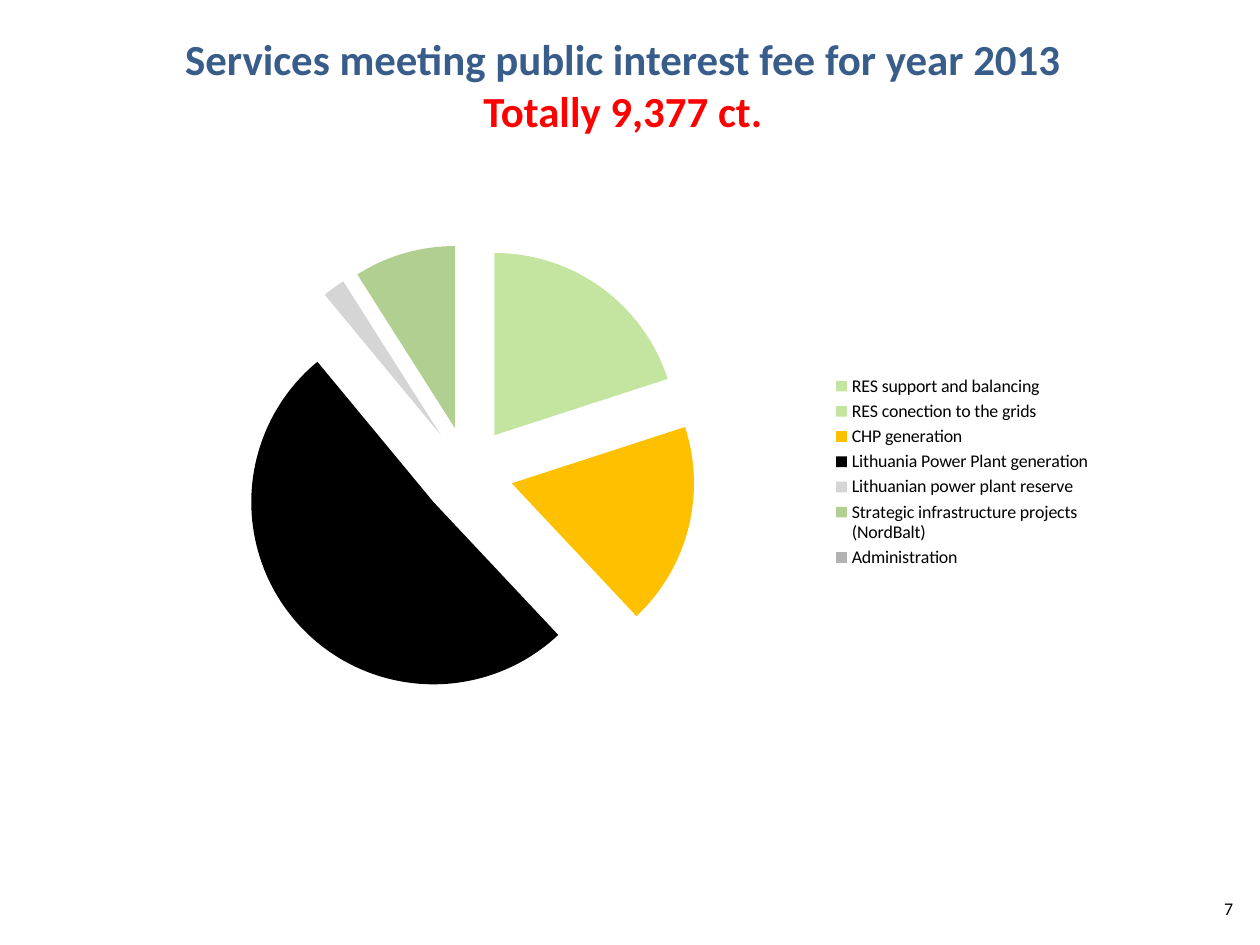
import pptx
import pptx.util
import pptx.dml.color
import pptx.chart.data
import pptx.enum.chart
import pptx.enum.text
import pptx.oxml

COLORS = {
    "heading": "385D8A",
    "total": "FF0000",
    "text": "000000",
    "renewables": "C4E59F",
    "cogeneration": "FFC000",
    "plant": "000000",
    "reserve": "D5D5D5",
    "infrastructure": "B1CF90",
    "administration": "B2B2B2",
}
FEES = [
    ("RES support and balancing", 20, "renewables"),
    ("RES conection to the grids", 0, "renewables"),
    ("CHP generation", 18, "cogeneration"),
    ("Lithuania Power Plant generation", 51, "plant"),
    ("Lithuanian power plant reserve", 2, "reserve"),
    ("Strategic infrastructure projects (NordBalt)", 9, "infrastructure"),
    ("Administration", 0, "administration"),
]
PLOT_AREA = {"x": 0.016, "y": 0.149, "w": 0.626, "h": 0.703}


def color(name):
    return pptx.dml.color.RGBColor.from_string(COLORS[name])


def style_font(font, name, **values):
    font.name = "Calibri"
    font.color.rgb = color(name)
    for key, value in values.items():
        setattr(font, key, value)


deck = pptx.Presentation()
deck.slide_width = pptx.util.Inches(9.8)
deck.slide_height = pptx.util.Inches(7.35)
page = deck.slides.add_slide(deck.slide_layouts[5])

title = page.shapes.title
number = page.shapes.add_textbox(0, 0, 0, 0)
for box, bounds in [(title, (0.13, 0.25, 9.43, 0.81)), (number, (9.45, 6.98, 0.21, 0.17))]:
    box.left, box.top, box.width, box.height = map(pptx.util.Inches, bounds)
    for side in ("left", "top", "right", "bottom"):
        setattr(box.text_frame, "margin_" + side, 0)

title.text_frame.vertical_anchor = pptx.enum.text.MSO_ANCHOR.MIDDLE
title.text_frame.auto_size = pptx.enum.text.MSO_AUTO_SIZE.NONE
para = title.text_frame.paragraphs[0]
para.alignment = pptx.enum.text.PP_ALIGN.CENTER
for text, name in [
    ("Services meeting public interest fee for year 2013", "heading"),
    ("Totally 9,377 ct.", "total"),
]:
    if para.runs:
        para.add_line_break()
    span = para.add_run()
    span.text = text
    style_font(span.font, name, size=pptx.util.Pt(24), bold=True)

number.text_frame.word_wrap = False
para = number.text_frame.paragraphs[0]
para.alignment = pptx.enum.text.PP_ALIGN.CENTER
span = para.add_run()
span.text = "7"
style_font(span.font, "text", size=pptx.util.Pt(10))

fee_data = pptx.chart.data.CategoryChartData()
fee_data.categories = [label for label, share, name in FEES]
fee_data.add_series("Series 1", [share for label, share, name in FEES])
chart = page.shapes.add_chart(
    pptx.enum.chart.XL_CHART_TYPE.PIE,
    *map(pptx.util.Inches, (1.21, 1.15, 7.38, 5.04)),
    fee_data,
).chart
style_font(chart.font, "text", size=pptx.util.Pt(10))
chart.has_title = False
chart.has_legend = True
chart.legend.position = pptx.enum.chart.XL_LEGEND_POSITION.RIGHT
chart.legend.include_in_layout = False

pie = chart.plots[0]
pie.vary_by_categories = True
series = pie.series[0]
namespace = pptx.oxml.ns.nsdecls("c")
explosion = pptx.oxml.parse_xml(f'<c:explosion {namespace} val="25"/>')
series._element.find(pptx.oxml.ns.qn("c:cat")).addprevious(explosion)
for index, (label, share, name) in enumerate(FEES):
    slice_format = series.points[index].format
    slice_format.fill.solid()
    slice_format.fill.fore_color.rgb = color(name)
    slice_format.line.fill.background()

modes = '<c:layoutTarget val="inner"/><c:xMode val="edge"/><c:yMode val="edge"/>'
sizes = "".join(f'<c:{key} val="{value}"/>' for key, value in PLOT_AREA.items())
layout = pptx.oxml.parse_xml(
    f"<c:layout {namespace}><c:manualLayout>{modes}{sizes}</c:manualLayout></c:layout>"
)
plot_area = chart._chartSpace.chart.plotArea
for default_layout in plot_area.findall(pptx.oxml.ns.qn("c:layout")):
    plot_area.remove(default_layout)
plot_area.insert(0, layout)

deck.save("out.pptx")
